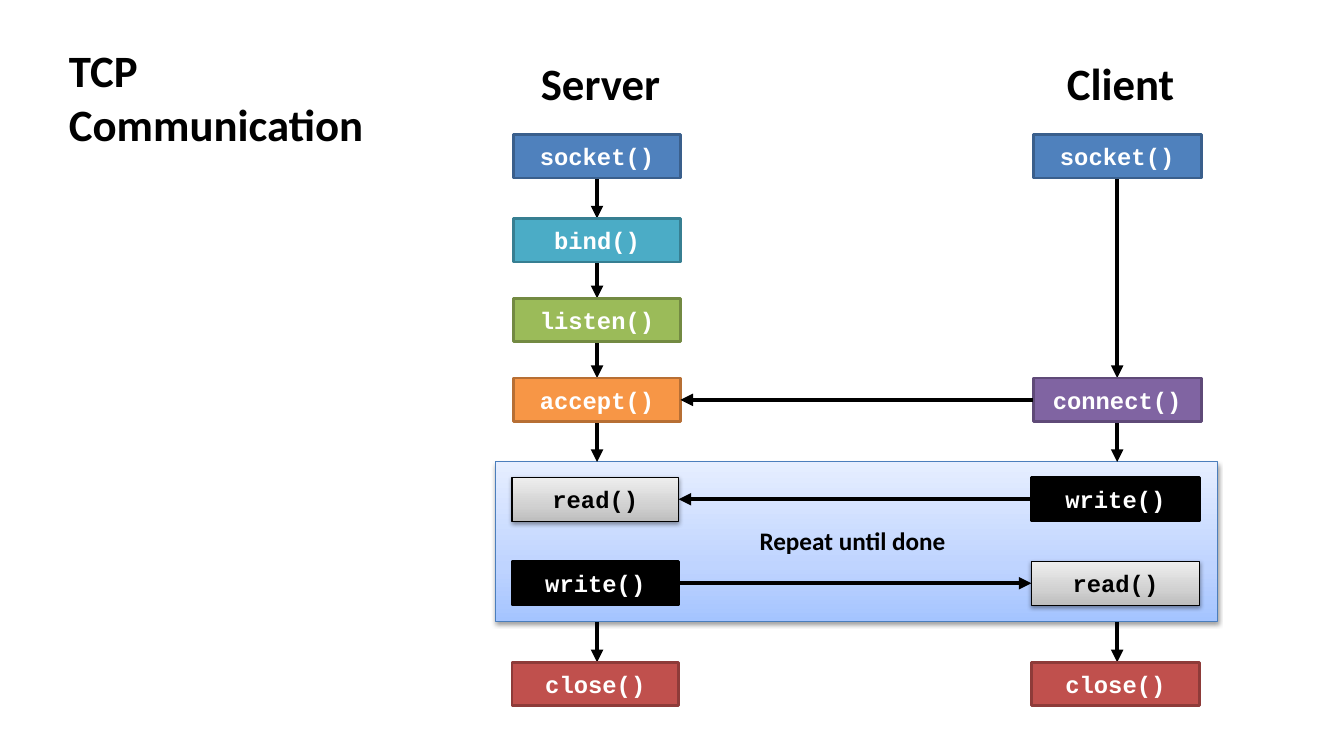
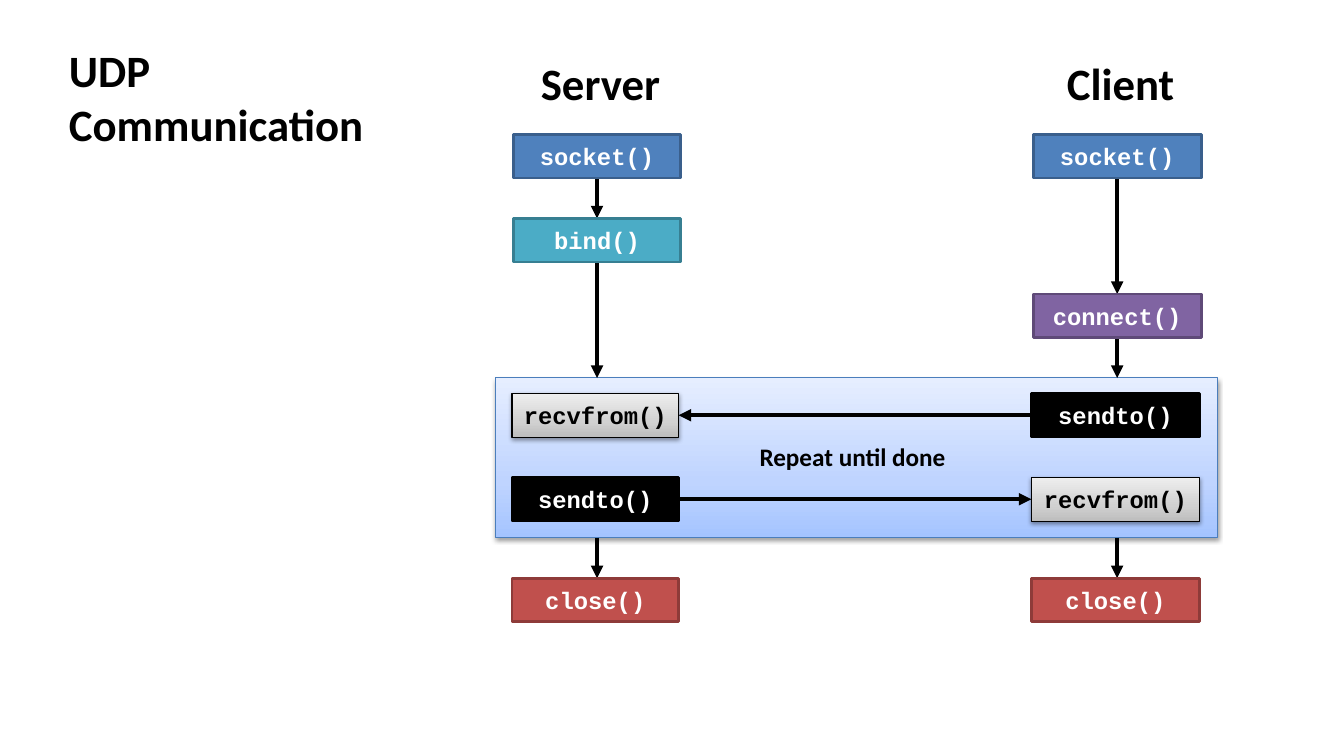
from copy import deepcopy
from lxml.etree import SubElement as sub
from pptx import Presentation as Deck
from pptx.dml.color import RGBColor as Rgb
from pptx.enum.shapes import MSO_CONNECTOR as Link, MSO_SHAPE as Form
from pptx.enum.text import MSO_ANCHOR as Anchor, MSO_AUTO_SIZE as Fit, PP_ALIGN as Align
from pptx.oxml.ns import qn
from pptx.util import Pt

INK = {"black": "000000", "white": "FFFFFF", "edge": "4B7EBC"}
CALL = {
    "socket()": ("4F81BD", "3A5F8C"),
    "bind()": ("4BACC6", "377F92"),
    "listen()": ("9BBB59", "738A42"),
    "accept()": ("F79646", "B76F34"),
    "connect()": ("8064A2", "5F4A78"),
    "close()": ("C0504D", "8E3B39"),
    "send": ("000000", "000000"),
}
FADE = {
    "loop": ("A4C4FF", "BFD4FF", "E6EEFF"),
    "recv": ("BDBDBD", "D1D1D1", "EEEEEE"),
}
SANS, MONO = "Calibri", "Courier New"
HIGH = 31.2
SHIFT = 1.25
LOOP = (354, 516, 114)
GAP = 29
SERVER = (367, 119)
CLIENT = (738, 120)
TALKS = [
    {
        "title": "TCP\nCommunication",
        "server": [("socket()", 96), ("bind()", 156), ("listen()", 213), ("accept()", 270)],
        "client": [("socket()", 96), ("connect()", 270)],
        "top": 330, "recv": "read()", "send": "write()", "join": 270,
    },
    {
        "title": "UDP\nCommunication",
        "server": [("socket()", 96), ("bind()", 156)],
        "client": [("socket()", 96), ("connect()", 210)],
        "top": 270, "recv": "recvfrom()", "send": "sendto()", "join": None,
    },
]


def style(frame, text, size, face=SANS, ink="black", align=Align.CENTER):
    """Fill a frame with bold text."""
    frame.text = text
    frame.word_wrap = True
    for para in frame.paragraphs:
        para.alignment = align
        for run in para.runs:
            font = run.font
            font.name, font.size, font.bold = face, Pt(size), True
            font.color.rgb = Rgb.from_string(INK[ink])


def label(slide, text, x, y, w, h, size):
    """Add a centred caption."""
    box = slide.shapes.add_textbox(Pt(x), Pt(y), Pt(w), Pt(h))
    style(box.text_frame, text, size)


def arrow(slide, x1, y1, x2, y2):
    """Draw a thick arrow between two points."""
    line = slide.shapes.add_connector(Link.STRAIGHT, Pt(x1), Pt(y1), Pt(x2), Pt(y2))
    line.line.width = Pt(3)
    line.line.color.rgb = Rgb.from_string(INK["black"])
    sub(line.line._get_or_add_ln(), qn("a:tailEnd"), type="triangle")
    sub(line._element.spPr, qn("a:effectLst"))


def block(slide, x, y, w, h, line, thick):
    """Add an outlined rectangle without a shadow."""
    box = slide.shapes.add_shape(Form.RECTANGLE, Pt(x), Pt(y), Pt(w), Pt(h))
    box.shadow.inherit = False
    box.line.color.rgb = Rgb.from_string(line)
    box.line.width = Pt(thick)
    return box


def glow(slide, x, y, w, h, fade, line):
    """Add a shaded rectangle with a soft shadow."""
    box = block(slide, x, y, w, h, line, 0.75)
    box.fill.gradient()
    box.fill.gradient_angle = 90
    props = box._element.spPr
    first = props.find(qn("a:gradFill")).find(qn("a:gsLst"))[0]
    first.addnext(deepcopy(first))
    for stop, spot, tint in zip(box.fill.gradient_stops, (0, 0.35, 1), FADE[fade]):
        stop.position = spot
        stop.color.rgb = Rgb.from_string(tint)
    cast = sub(props.find(qn("a:effectLst")), qn("a:outerShdw"), blurRad="40000",
               dist="20000", dir="5400000", rotWithShape="0")
    tone = sub(cast, qn("a:srgbClr"), val=INK["black"])
    sub(tone, qn("a:alpha"), val="38000")
    return box


def call(slide, text, x, y, w, kind=None):
    """Add a box that names one function call."""
    if kind == "recv":
        box = glow(slide, x, y, w, HIGH, kind, INK["black"])
    else:
        fill, line = CALL[kind or text]
        box = block(slide, x, y, w, HIGH, line, 2)
        box.fill.solid()
        box.fill.fore_color.rgb = Rgb.from_string(fill)
    style(box.text_frame, text, 17, MONO, "black" if kind == "recv" else "white")
    box.text_frame.vertical_anchor = Anchor.MIDDLE


def lane(slide, x, w, name, steps, top):
    """Place one side's heading, calls and arrows around the loop."""
    mid = x + w / 2
    label(slide, name, mid - 84.5, 36, 174, 46, 32)
    ends = [y for _, y in steps[1:]] + [top]
    for (_, y), end in zip(steps, ends):
        arrow(slide, mid, y + HIGH, mid, end)
    base = top + LOOP[2]
    arrow(slide, mid, base, mid, base + GAP)
    for text, y in steps:
        call(slide, text, x, y, w)
    call(slide, "close()", x - SHIFT, base + GAP, w)


def swap(slide, x, y, w, h, recv, send):
    """Place the repeated exchange within its panel."""
    glow(slide, x, y, w, h, "loop", INK["edge"])
    left, right = SERVER[0] - SHIFT, CLIENT[0] - SHIFT
    edge = left + SERVER[1]
    high, low = y + 11, y + 71
    half = HIGH / 2
    arrow(slide, right, high + half, edge, high + half)
    arrow(slide, edge, low + half, right, low + half)
    for start, wide, rows in ((left, SERVER[1], (high, low)), (right, CLIENT[1], (low, high))):
        call(slide, recv, start, rows[0], wide, "recv")
        call(slide, send, start, rows[1], wide, "send")
    label(slide, "Repeat until done", x + 168, y + 42, 174, 29, 18)


def head(slide, text, x, y, w, h):
    """Place the title in its box."""
    title = slide.shapes.title
    title.left, title.top, title.width, title.height = Pt(x), Pt(y), Pt(w), Pt(h)
    frame = title.text_frame
    style(frame, text, 32, align=Align.LEFT)
    frame.auto_size = Fit.NONE
    frame.vertical_anchor = Anchor.TOP


def page(deck, talk):
    """Build one protocol slide."""
    slide = deck.slides.add_slide(deck.slide_layouts[5])
    top = talk["top"]
    head(slide, talk["title"], 42, 27, 237, 85)
    x, w, h = LOOP
    swap(slide, x, top, w, h, talk["recv"], talk["send"])
    lane(slide, *SERVER, "Server", talk["server"], top)
    lane(slide, *CLIENT, "Client", talk["client"], top)
    if talk["join"]:
        y = talk["join"] + HIGH / 2
        arrow(slide, CLIENT[0], y, sum(SERVER), y)


def main():
    """Build and save the deck."""
    deck = Deck()
    deck.slide_width, deck.slide_height = Pt(960), Pt(540)
    for talk in TALKS:
        page(deck, talk)
    deck.save("out.pptx")


if __name__ == "__main__":
    main()
